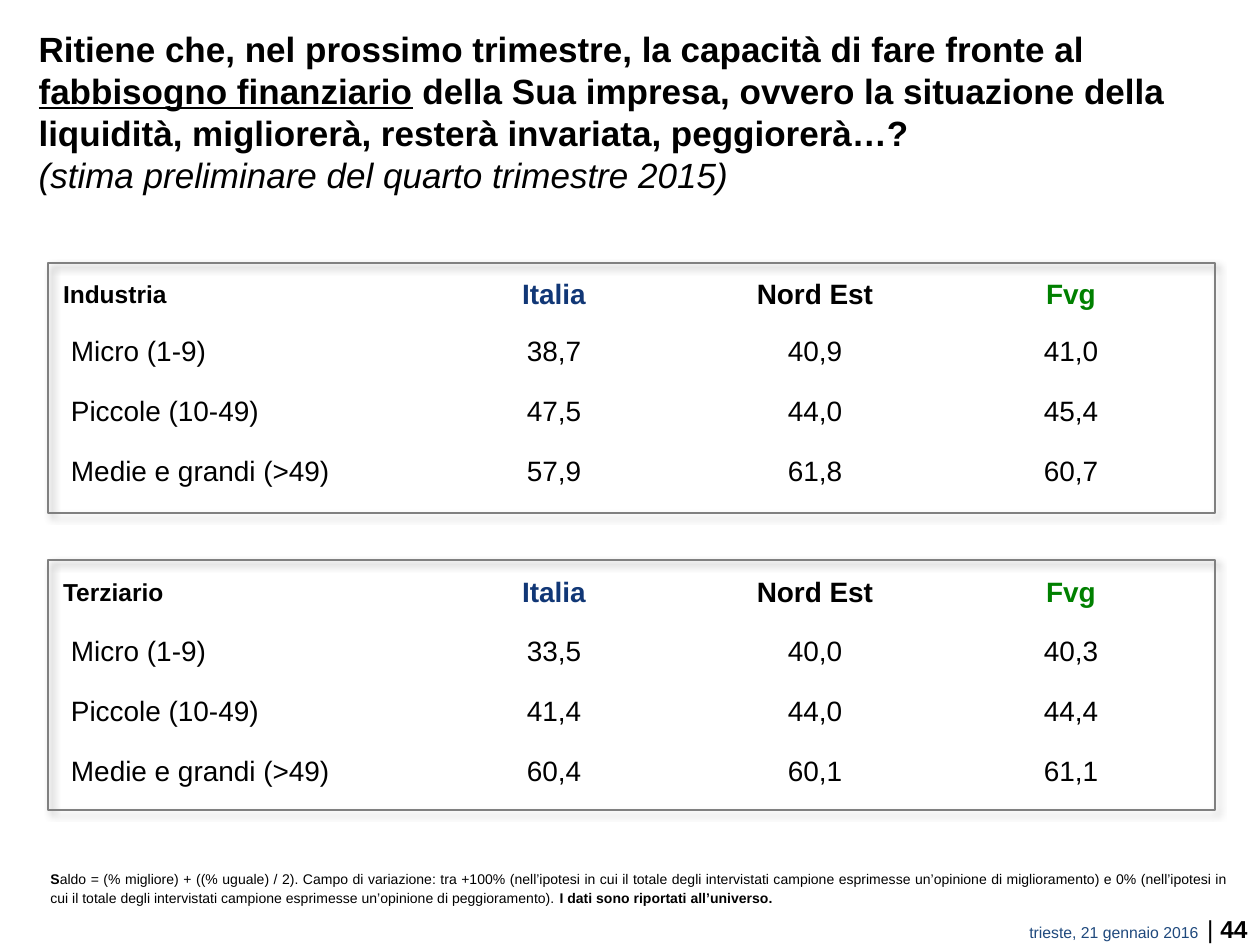
from dataclasses import dataclass

from lxml.etree import SubElement
from pptx import Presentation
from pptx.dml.color import RGBColor
from pptx.enum.shapes import MSO_SHAPE
from pptx.enum.text import MSO_ANCHOR as ANCHOR, MSO_AUTO_SIZE as AUTO, PP_ALIGN as ALIGN
from pptx.oxml.ns import qn
from pptx.util import Pt

EMU_PER_PX = 914400 / 126
NO_GRID_STYLE = "{2D5ABB26-0587-4C30-8999-92F81FD0307C}"


@dataclass(frozen=True)
class Theme:
    font: str = "Arial"
    black: str = "000000"
    blue: str = "113776"
    green: str = "008000"
    date: str = "1F497D"
    frame: str = "808080"
    title: int = 20
    body: int = 16
    label: int = 14
    small: int = 9
    note: int = 8


THEME = Theme()
SIZES = ["Micro (1-9)", "Piccole (10-49)", "Medie e grandi (>49)"]
AREAS = [("Italia", THEME.blue), ("Nord Est", THEME.black), ("Fvg", THEME.green)]
COLUMNS = [376, 260, 262, 250]
ROW_HEIGHT = 60
INDUSTRIA = [
    ["38,7", "40,9", "41,0"],
    ["47,5", "44,0", "45,4"],
    ["57,9", "61,8", "60,7"],
]
TERZIARIO = [
    ["33,5", "40,0", "40,3"],
    ["41,4", "44,0", "44,4"],
    ["60,4", "60,1", "61,1"],
]


def px(n):
    return round(n * EMU_PER_PX)


def add_run(p, text, size, color=THEME.black, **styles):
    r = p.add_run()
    r.text = text
    formats = {"name": THEME.font, "size": Pt(size), "bold": False, **styles}
    for name, value in formats.items():
        setattr(r.font, name, value)
    r.font.color.rgb = RGBColor.from_string(color)


def add_text_box(slide, box, align):
    tf = slide.shapes.add_textbox(*map(px, box)).text_frame
    tf.word_wrap = True
    p = tf.paragraphs[0]
    p.alignment = align
    return p


def add_title(slide, box):
    sp = slide.shapes.title
    sp.left, sp.top, sp.width, sp.height = map(px, box)
    tf = sp.text_frame
    formats = {"word_wrap": True, "auto_size": AUTO.NONE, "vertical_anchor": ANCHOR.TOP}
    for name, value in formats.items():
        setattr(tf, name, value)
    p = tf.paragraphs[0]
    p.alignment = ALIGN.LEFT
    add_run(p, "Ritiene che, nel prossimo trimestre, la capacità di fare fronte al ",
            THEME.title, bold=True)
    add_run(p, "fabbisogno finanziario", THEME.title, bold=True, underline=True)
    add_run(p, " della Sua impresa, ovvero la situazione della liquidità, "
            "migliorerà, resterà invariata, peggiorerà…? ", THEME.title, bold=True)
    p.add_line_break()
    add_run(p, "(stima preliminare del quarto trimestre 2015)", THEME.title, italic=True)


def add_frame(slide, box):
    sp = slide.shapes.add_shape(MSO_SHAPE.RECTANGLE, *map(px, box))
    sp.shadow.inherit = False
    sp.fill.background()
    sp.line.color.rgb = RGBColor.from_string(THEME.frame)
    sp.line.width = Pt(1)
    effects = sp._element.spPr.find(qn("a:effectLst"))
    shadow = SubElement(effects, qn("a:outerShdw"), blurRad=str(Pt(4)),
                        dist=str(Pt(3)), dir="2700000", rotWithShape="0")
    color = SubElement(shadow, qn("a:srgbClr"), val=THEME.black)
    SubElement(color, qn("a:alpha"), val="40000")


def fill_cell(cell, text, size, color, bold, align, indent):
    cell.fill.background()
    formats = {"margin_left": px(indent), "margin_right": 0, "margin_top": 0,
               "margin_bottom": 0, "vertical_anchor": ANCHOR.MIDDLE}
    for name, value in formats.items():
        setattr(cell, name, value)
    p = cell.text_frame.paragraphs[0]
    p.alignment = align
    add_run(p, text, size, color, bold=bold)


def add_sector(slide, box, sector, values, inset, header_height):
    add_frame(slide, box)
    left, top = box[:2]
    heights = [header_height] + [ROW_HEIGHT] * len(SIZES)
    frame = slide.shapes.add_table(
        len(heights), len(COLUMNS), px(left), px(top + inset),
        px(sum(COLUMNS)), px(sum(heights)))
    table = frame.table
    table.first_row = table.horz_banding = False
    next(frame._element.iter(qn("a:tableStyleId"))).text = NO_GRID_STYLE
    for column, width in zip(table.columns, COLUMNS):
        column.width = px(width)
    for row, height in zip(table.rows, heights):
        row.height = px(height)

    fill_cell(table.cell(0, 0), sector, THEME.label, THEME.black, True, ALIGN.LEFT, 15)
    for j, (area, color) in enumerate(AREAS, 1):
        fill_cell(table.cell(0, j), area, THEME.body, color, True, ALIGN.CENTER, 0)
    for i, (size, figures) in enumerate(zip(SIZES, values), 1):
        fill_cell(table.cell(i, 0), size, THEME.body, THEME.black, False, ALIGN.LEFT, 23)
        for j, figure in enumerate(figures, 1):
            fill_cell(table.cell(i, j), figure, THEME.body, THEME.black, False,
                      ALIGN.CENTER, 0)


def add_note(slide, box):
    p = add_text_box(slide, box, ALIGN.JUSTIFY)
    p.line_spacing = 1.1
    add_run(p, "S", THEME.note, bold=True)
    add_run(p, "aldo = (% migliore) + ((% uguale) / 2). Campo di variazione: tra +100% "
            "(nell’ipotesi in cui il totale degli intervistati campione esprimesse "
            "un’opinione di miglioramento) e 0% (nell’ipotesi in cui il totale degli "
            "intervistati campione esprimesse un’opinione di peggioramento). ", THEME.note)
    add_run(p, "I dati sono riportati all’universo.", THEME.note, bold=True)


def add_footer(slide, box):
    p = add_text_box(slide, box, ALIGN.RIGHT)
    add_run(p, "trieste, 21 gennaio 2016  ", THEME.small, THEME.date)
    add_run(p, "| ", THEME.label)
    add_run(p, "44", THEME.label, bold=True)


def main():
    prs = Presentation()
    prs.slide_width, prs.slide_height = px(1260), px(945)
    slide = prs.slides.add_slide(prs.slide_layouts[5])
    add_title(slide, (26, 21, 1198, 106))
    add_sector(slide, (48, 263, 1167, 250), "Industria", INDUSTRIA, 5, 54)
    add_sector(slide, (48, 560, 1167, 250), "Terziario", TERZIARIO, 4, 58)
    add_note(slide, (38, 863, 1204, 50))
    add_footer(slide, (388, 908, 872, 37))
    prs.save("out.pptx")


if __name__ == "__main__":
    main()
